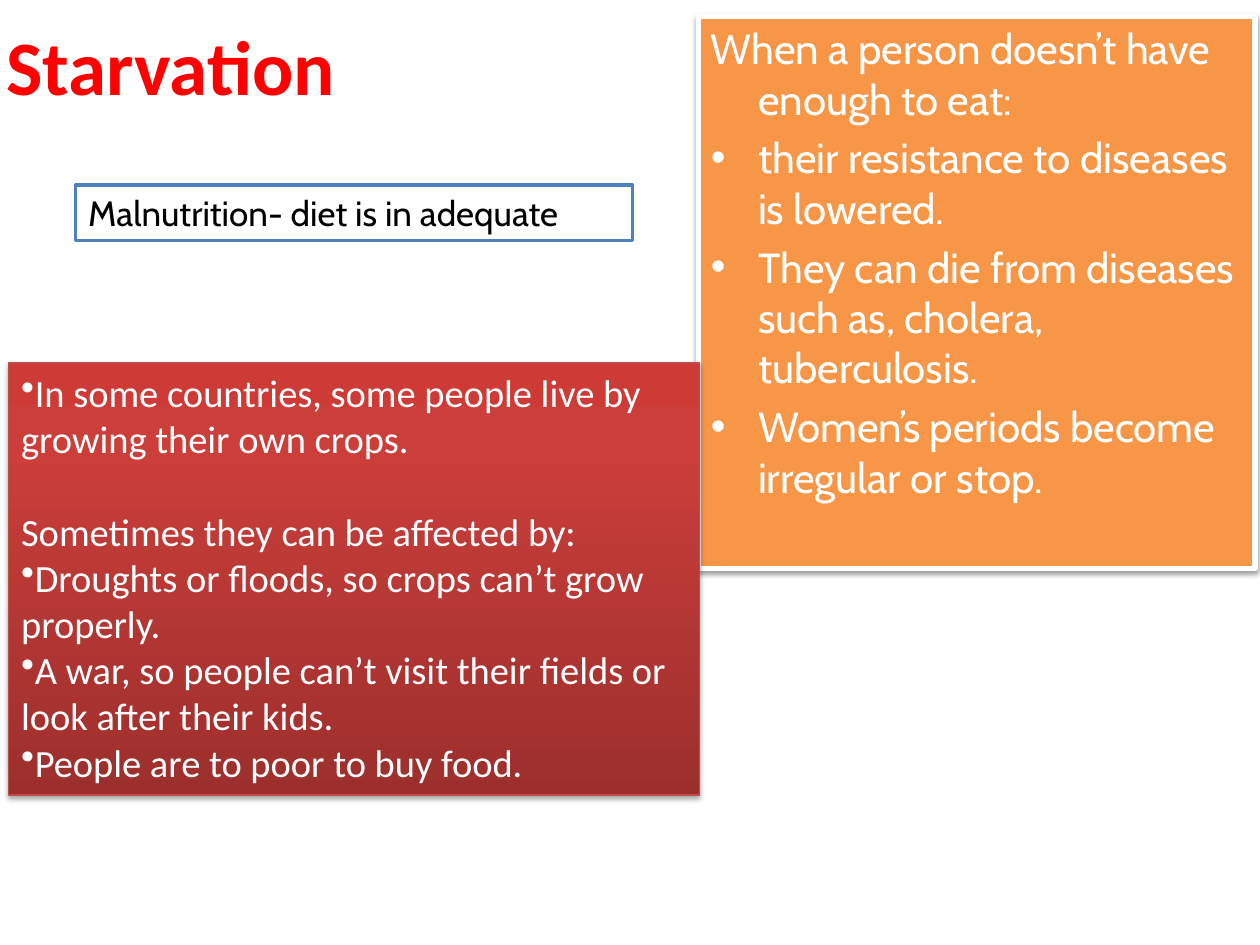
"""Build the Starvation slide."""
import pptx
import pptx.dml.color
import pptx.enum.shapes
import pptx.enum.text
import pptx.oxml
import pptx.oxml.ns
import pptx.util

Pt = pptx.util.Pt
RGBColor = pptx.dml.color.RGBColor
RED = RGBColor(0xFF, 0x00, 0x00)
BLACK = RGBColor(0x00, 0x00, 0x00)
WHITE = RGBColor(0xFF, 0xFF, 0xFF)
BLUE = RGBColor(0x4F, 0x81, 0xBD)
ORANGE = RGBColor(0xF7, 0x96, 0x46)
BRICK = RGBColor(0xBF, 0x4C, 0x48)
GRADIENT = [
    (0, RGBColor(0x9C, 0x2F, 0x2D)),
    (80, RGBColor(0xCB, 0x3E, 0x3A)),
    (100, RGBColor(0xCE, 0x3B, 0x37)),
]
NS = pptx.oxml.ns.nsdecls("a")


def write(sp, items, font, size, color):
    sp.text_frame.text = "\n".join(text for text, bullet in items)
    for p, (text, bullet) in zip(sp.text_frame.paragraphs, items):
        tag = '<a:buChar %s char="•"/>' if bullet else "<a:buNone %s/>"
        p._p.get_or_add_pPr().append(pptx.oxml.parse_xml(tag % NS))
        p.alignment = pptx.enum.text.PP_ALIGN.LEFT
        p.font.name = font
        p.font.size = Pt(size)
        p.font.color.rgb = color


def add_shadow(sp, distance, opacity):
    sp.shadow.inherit = False
    effects = sp._element.spPr.find(pptx.oxml.ns.qn("a:effectLst"))
    effects.append(pptx.oxml.parse_xml(
        f'<a:outerShdw {NS} blurRad="{Pt(3.1)}" dist="{Pt(distance)}" dir="5400000" rotWithShape="0">'
        f'<a:srgbClr val="{BLACK}"><a:alpha val="{opacity * 1000}"/></a:srgbClr></a:outerShdw>'))


prs = pptx.Presentation()
prs.slide_width, prs.slide_height = Pt(720), Pt(540)
s = prs.slides.add_slide(prs.slide_layouts[3])
for sp in list(s.placeholders)[3:]:
    sp._element.getparent().remove(sp._element)

title, definition, effects = s.placeholders
causes = s.shapes.add_shape(pptx.enum.shapes.MSO_SHAPE.RECTANGLE, 0, 0, 0, 0)
boxes = [
    (title, (-3.6, -8, 648, 90)),
    (definition, (43.2, 105.8, 318.2, 31.7)),
    (effects, (399, 9.4, 318.2, 315.4)),
    (causes, (5, 207.4, 394.6, 247)),
]
for sp, box in boxes:
    sp.left, sp.top, sp.width, sp.height = map(Pt, box)
    sp.text_frame.auto_size = pptx.enum.text.MSO_AUTO_SIZE.NONE

write(title, [("Starvation", False)], "Calibri", 44, RED)
title.text_frame.paragraphs[0].font.bold = True
write(definition, [("Malnutrition- diet is in adequate", False)], "Cabin", 20, BLACK)
write(effects, [
    ("When a person doesn’t have enough to eat:", False),
    ("their resistance to diseases is lowered.", True),
    ("They can die from diseases such as, cholera, tuberculosis.", True),
    ("Women’s periods become irregular or stop.", True),
], "Cabin", 24, WHITE)
write(causes, [
    ("In some countries, some people live by growing their own crops.", True),
    ("Sometimes they can be affected by:", False),
    ("Droughts or floods, so crops can’t grow properly.", True),
    ("A war, so people can’t visit their fields or look after their kids.", True),
    ("People are to poor to buy food.", True),
], "Calibri", 22, WHITE)
causes.text_frame.paragraphs[1].space_before = Pt(26.4)
causes.text_frame.vertical_anchor = pptx.enum.text.MSO_ANCHOR.TOP
causes.text_frame.auto_size = pptx.enum.text.MSO_AUTO_SIZE.SHAPE_TO_FIT_TEXT

for sp, fill, line, width in [(definition, WHITE, BLUE, 2), (effects, ORANGE, WHITE, 3),
                              (causes, None, BRICK, 0.75)]:
    if fill is None:
        sp.fill.gradient()
        sp.fill.gradient_angle = 90
        stops = sp._element.spPr.find(".//" + pptx.oxml.ns.qn("a:gsLst"))
        stops.clear()
        for position, color in GRADIENT:
            stops.append(pptx.oxml.parse_xml(
                f'<a:gs {NS} pos="{position * 1000}"><a:srgbClr val="{color}"/></a:gs>'))
    else:
        sp.fill.solid()
        sp.fill.fore_color.rgb = fill
    sp.line.color.rgb = line
    sp.line.width = Pt(width)

add_shadow(effects, 1.6, 38)
add_shadow(causes, 1.8, 35)

prs.save("out.pptx")
